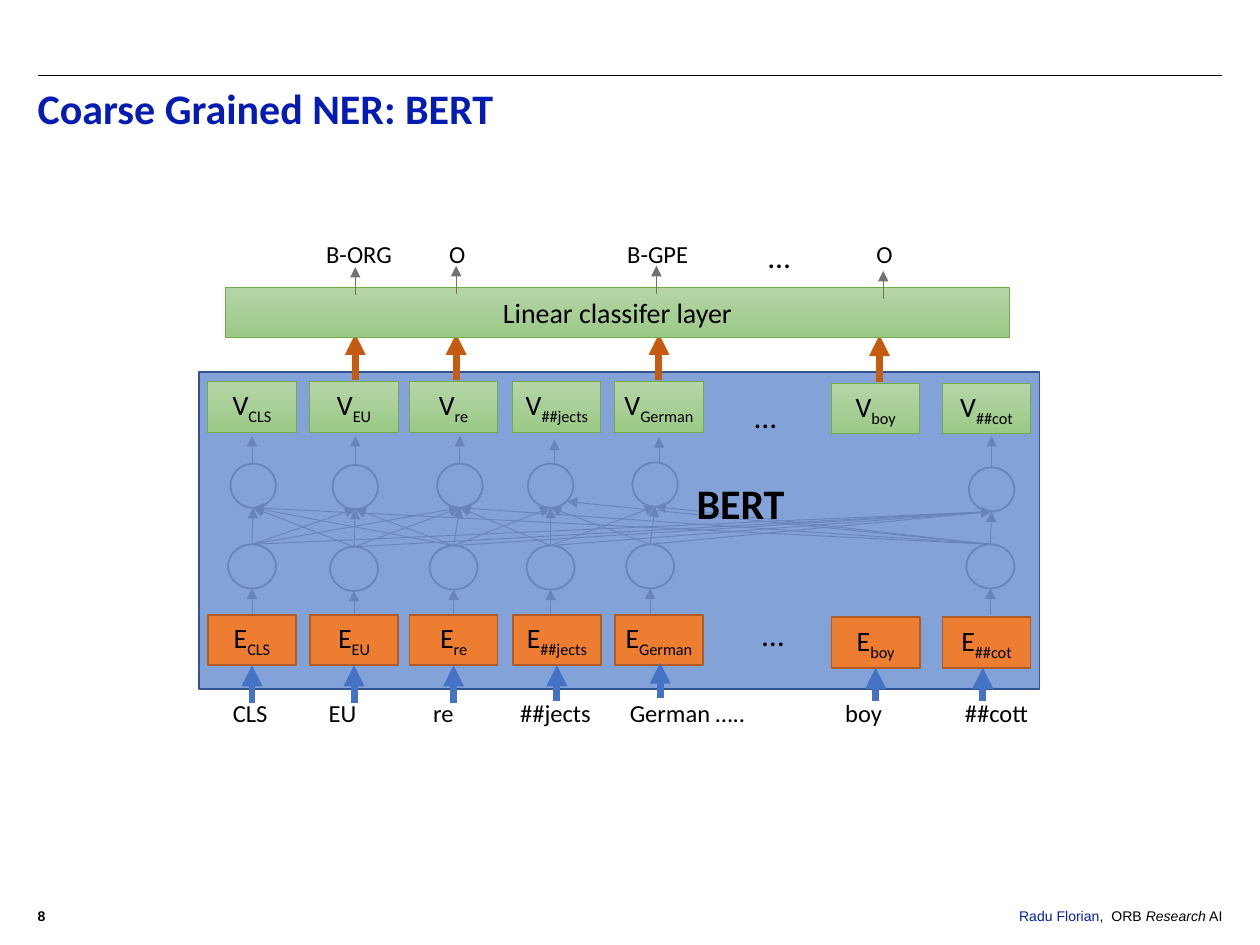
from lxml import etree
from pptx import Presentation
from pptx import util as u
from pptx.dml.color import RGBColor
from pptx.enum import shapes, text
from pptx.oxml.ns import qn

BLACK, NAVY, BLUE, GRAY = "000000", "051CB4", "4472C4", "AFABAB"
TITLE = "Coarse Grained NER: BERT"
AUTHOR = [("Radu Florian", NAVY, False), (",  ORB ", BLACK, False),
          ("Research", BLACK, True), (" AI", BLACK, False)]
BOXES = [("CLS", 1.65, 0), ("EU", 2.46, 0), ("re", 3.25, 0), ("##jects", 4.07, 0),
         ("German", 4.88, 0), ("boy", 6.6, 0.02), ("##cot", 7.48, 0.02)]
TOKENS = [("CLS", 1.85), ("EU", 2.61), ("re", 3.44), ("##jects", 4.13),
          ("German …..", 5), ("boy", 6.71), ("##cott", 7.66)]
TAGS = [("B-ORG", 2.85), ("O", 3.63), ("B-GPE", 5.22), ("O", 7.02)]
ELLIPSES = [(5.89, 3.1), (5.95, 4.83), (6, 1.83)]
UPPER = [(2.01, 3.68), (2.82, 3.69), (3.65, 3.68), (4.37, 3.68), (5.2, 3.67), (7.87, 3.71)]
LOWER = [(2, 4.32), (2.81, 4.34), (3.6, 4.33), (4.37, 4.33), (5.16, 4.32), (7.86, 4.32)]
UPPER_ARROWS = [(2, 3.46), (2.82, 3.46), (3.65, 3.46), (4.4, 3.49), (5.23, 3.47), (7.87, 3.46)]
LINKS = {0: [0, 1, 2, 5], 1: [0, 1, 2, 5], 2: [0, 1, 2, 3, 5],
         3: [2, 3, 4, 5], 4: [3, 4, 5], 5: [0, 2, 4, 5]}
SIDE_LINK = (7.86, 4.32, 4.5, 3.98)
INPUT_ARROWS = [(2, 5.58, 5.28), (2.81, 5.58, 5.28), (3.6, 5.58, 5.28), (4.42, 5.56, 5.28),
                (5.24, 5.54, 5.26), (6.95, 5.56, 5.3), (7.8, 5.56, 5.3)]
CLASSIFIER_ARROWS = [(2.82, 3.02), (3.62, 3.02), (5.23, 3.02), (6.98, 3.03)]
TAG_ARROWS = [(2.82, 2.34), (3.62, 2.33), (5.21, 2.33), (7.01, 2.37)]
NODE_H = 0.35
GREEN = ("B5D5A7", "9CC987")

prs = Presentation()
prs.slide_width, prs.slide_height = u.Inches(10), u.Inches(7.5)
s = prs.slides.add_slide(prs.slide_layouts[6])


def rgb(value):
    return RGBColor.from_string(value)


def style(p, size, color=BLACK, bold=False, font="Calibri"):
    p.font.name, p.font.size, p.font.bold = font, u.Pt(size), bold
    p.font.color.rgb = rgb(color)


def label(content, x, y, w, h, size, align=None, **font):
    tf = s.shapes.add_textbox(*map(u.Inches, (x, y, w, h))).text_frame
    tf.word_wrap = True
    p = tf.paragraphs[0]
    p.text = content
    p.alignment = align
    style(p, size, **font)
    return p


def shape(kind, x, y, w, h, fill, line, width):
    sp = s.shapes.add_shape(kind, *map(u.Inches, (x, y, w, h)))
    sp.shadow.inherit = False
    if isinstance(fill, tuple):
        sp.fill.gradient()
        sp.fill.gradient_angle = 270
        for stop, color in zip(sp.fill.gradient_stops, fill):
            stop.color.rgb = rgb(color)
    else:
        sp.fill.solid()
        sp.fill.fore_color.rgb = rgb(fill)
    sp.line.color.rgb = rgb(line)
    sp.line.width = u.Pt(width)
    return sp


def box(main, sub, x, y, w, fill, line, width):
    sp = shape(shapes.MSO_SHAPE.RECTANGLE, x, y, w, 0.4, fill, line, width)
    tf = sp.text_frame
    tf.margin_left = tf.margin_right = 0
    tf.vertical_anchor = text.MSO_ANCHOR.MIDDLE
    p = tf.paragraphs[0]
    p.alignment = text.PP_ALIGN.CENTER
    style(p, 16)
    p.add_run().text = main
    if sub:
        r = p.add_run()
        r.text = sub
        r._r.get_or_add_rPr().set("baseline", "-25000")


def line(x1, y1, x2, y2, color, width, head=True):
    c = s.shapes.add_connector(shapes.MSO_CONNECTOR.STRAIGHT, *map(u.Inches, (x1, y1, x2, y2)))
    c.line.color.rgb = rgb(color)
    c.line.width = u.Pt(width)
    if head:
        etree.SubElement(c.line._get_or_add_ln(), qn("a:tailEnd"), type="triangle")
    etree.SubElement(c._element.spPr, qn("a:effectLst"))


line(0.3, 0.6, 9.7, 0.6, BLACK, 0.75, head=False)
label(TITLE, 0.2, 0.65, 9.5, 0.7, 24, color=NAVY, bold=True).line_spacing = 0.9
label("8", 0.2, 7.15, 0.4, 0.2, 8, bold=True, font="Arial")
p = label("", 7.89, 7.15, 1.91, 0.2, 8, text.PP_ALIGN.RIGHT, font="Arial")
for content, color, italic in AUTHOR:
    r = p.add_run()
    r.text = content
    r.font.color.rgb = rgb(color)
    r.font.italic = italic

for nodes, w in ((UPPER, 0.36), (LOWER, 0.38)):
    for x, y in nodes:
        shape(shapes.MSO_SHAPE.OVAL, x - w / 2, y, w, NODE_H, "FFFFFF", GRAY, 1)
for i, targets in LINKS.items():
    for j in targets:
        line(*LOWER[i], UPPER[j][0], UPPER[j][1] + NODE_H, GRAY, 0.5)
line(*SIDE_LINK, GRAY, 0.5)
for (x, y), end in zip(UPPER, UPPER_ARROWS):
    line(end[0], y, *end, GRAY, 0.5)
for x, y in LOWER:
    line(x, 4.88, x, y + NODE_H, GRAY, 0.5)

panel = shape(shapes.MSO_SHAPE.RECTANGLE, 1.58, 2.95, 6.67, 2.52, BLUE, "325491", 1)
color = panel.fill._xPr.find(qn("a:solidFill"))[0]
etree.SubElement(color, qn("a:alpha"), val="66000")

for sub, x, dy in BOXES:
    box("E", sub, x, 4.88 + dy, 0.7, "ED7D31", "AF5C24", 1)
    box("V", sub, x, 3.03 + dy / 2, 0.7, GREEN, "70AD47", 0.5)
for x, y1, y2 in INPUT_ARROWS:
    line(x, y1, x, y2, BLUE, 4)
for x, y in CLASSIFIER_ARROWS:
    line(x, y, x, y - 0.37, "C55A11", 4)
box("Linear classifer layer", "", 1.79, 2.28, 6.22, GREEN, "70AD47", 0.5)
for x, y in TAG_ARROWS:
    line(x, y, x, y - 0.22, "767171", 0.5)

for tag, x in TAGS:
    label(tag, x - 0.37, 1.85, 0.74, 0.34, 14, text.PP_ALIGN.CENTER)
for x, y in ELLIPSES:
    label("…", x, y, 0.4, 0.4, 18)
label("BERT", 5.43, 3.74, 1.4, 0.5, 24, bold=True)

start = TOKENS[0][1]
p = label("", start - 0.1, 5.49, 6.57, 0.34, 14)
tabs = etree.Element(qn("a:tabLst"))
p._p.get_or_add_pPr().insert(0, tabs)
for token, x in TOKENS[1:]:
    etree.SubElement(tabs, qn("a:tab"), pos=str(u.Inches(x - start)), algn="l")
p.add_run().text = "\t".join(token for token, x in TOKENS)

prs.save("out.pptx")
